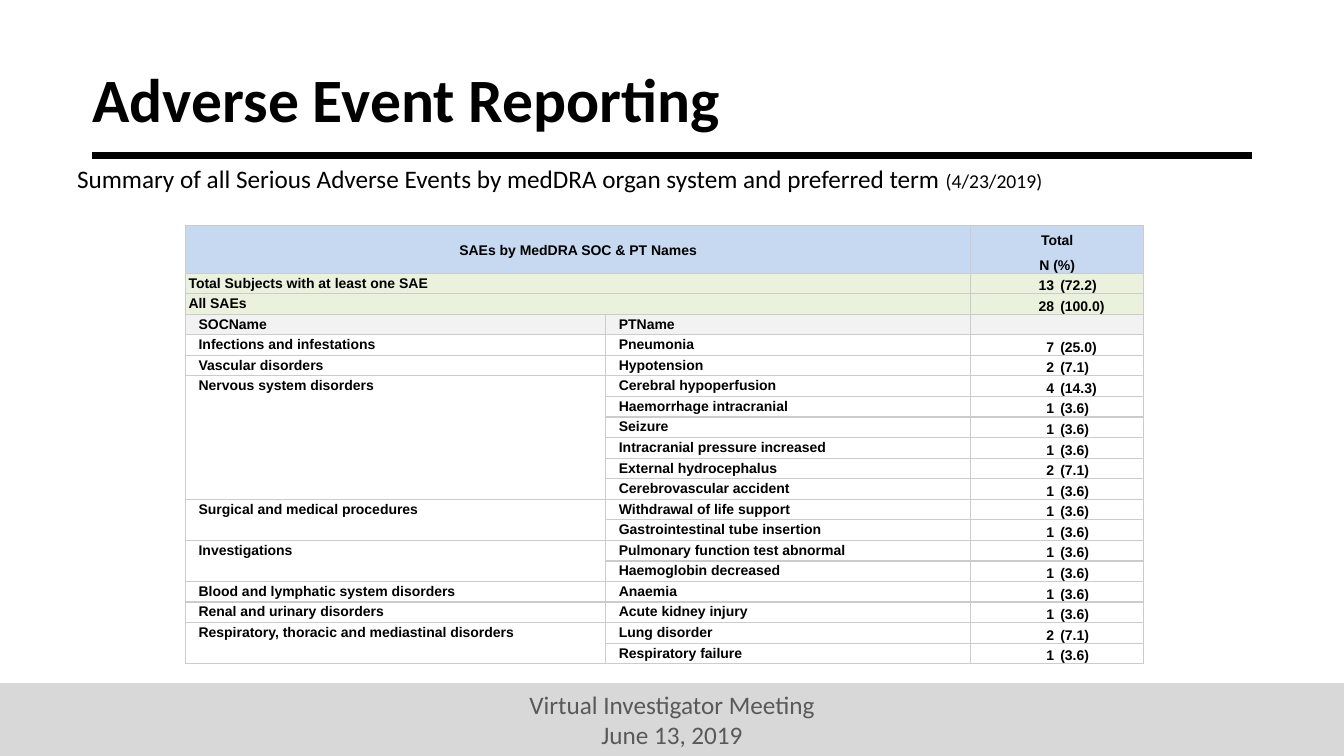
from dataclasses import dataclass
from typing import Any

from lxml.etree import SubElement
from pptx import Presentation
from pptx.dml.color import RGBColor
from pptx.enum.shapes import MSO_CONNECTOR, MSO_SHAPE
from pptx.enum.text import MSO_ANCHOR, PP_ALIGN
from pptx.oxml.ns import qn
from pptx.util import Pt

BLACK = RGBColor(0, 0, 0)
GREY = RGBColor(0x59, 0x59, 0x59)
BAND = RGBColor(0xD8, 0xD8, 0xD8)
RULE = RGBColor(0xCC, 0xCC, 0xCC)
BLUE = RGBColor(0xC6, 0xD9, 0xF1)
GREEN = RGBColor(0xEA, 0xF1, 0xDD)
PALE = RGBColor(0xF2, 0xF2, 0xF2)

TITLE = {"name": "Calibri", "size": Pt(44), "bold": True}
BODY = {"name": "Calibri", "size": Pt(18)}
SMALL = {"name": "Calibri", "size": Pt(14)}
CELL = {"name": "Arial", "size": Pt(10), "bold": True}
TIGHT = {"line_spacing": 0.9}
LOOSE = {"line_spacing": 1.15, "space_before": Pt(2.4), "space_after": Pt(2.4)}
COLS = [300.2, 260.6, 61.9, 61.9]
HEAD, ROW = 33.8, 14.7
INDENT = 7.2


@dataclass
class Event:
    term: str
    count: int
    share: str


@dataclass
class Organ:
    name: str
    events: list[Event]


TOTALS = [
    Event("Total Subjects with at least one SAE", 13, "72.2"),
    Event("All SAEs", 28, "100.0"),
]
ORGANS = [
    Organ("Infections and infestations", [Event("Pneumonia", 7, "25.0")]),
    Organ("Vascular disorders", [Event("Hypotension", 2, "7.1")]),
    Organ("Nervous system disorders", [
        Event("Cerebral hypoperfusion", 4, "14.3"),
        Event("Haemorrhage intracranial", 1, "3.6"),
        Event("Seizure", 1, "3.6"),
        Event("Intracranial pressure increased", 1, "3.6"),
        Event("External hydrocephalus", 2, "7.1"),
        Event("Cerebrovascular accident", 1, "3.6"),
    ]),
    Organ("Surgical and medical procedures", [
        Event("Withdrawal of life support", 1, "3.6"),
        Event("Gastrointestinal tube insertion", 1, "3.6"),
    ]),
    Organ("Investigations", [
        Event("Pulmonary function test abnormal", 1, "3.6"),
        Event("Haemoglobin decreased", 1, "3.6"),
    ]),
    Organ("Blood and lymphatic system disorders", [Event("Anaemia", 1, "3.6")]),
    Organ("Renal and urinary disorders", [Event("Acute kidney injury", 1, "3.6")]),
    Organ("Respiratory, thoracic and mediastinal disorders", [
        Event("Lung disorder", 2, "7.1"),
        Event("Respiratory failure", 1, "3.6"),
    ]),
]


def apply(item: Any, form: dict[str, Any]) -> None:
    for key, value in form.items():
        setattr(item, key, value)


def add_run(para: Any, text: str, form: dict[str, Any], color: RGBColor = BLACK) -> None:
    run = para.add_run()
    run.text = text
    apply(run.font, form)
    run.font.color.rgb = color


def add_box(slide: Any, left: float, top: float, width: float, height: float,
            anchor: MSO_ANCHOR) -> Any:
    frame = slide.shapes.add_textbox(Pt(left), Pt(top), Pt(width), Pt(height)).text_frame
    sides = ("margin_left", "margin_top", "margin_right", "margin_bottom")
    apply(frame, {"word_wrap": True, "vertical_anchor": anchor} | dict.fromkeys(sides, Pt(7.2)))
    return frame.paragraphs[0]


def set_cell(cell: Any, lines: list[str], align: PP_ALIGN = PP_ALIGN.LEFT,
             anchor: MSO_ANCHOR = MSO_ANCHOR.TOP, indent: float = 0) -> None:
    cell.vertical_anchor = anchor
    frame = cell.text_frame
    for i, line in enumerate(lines):
        para = frame.add_paragraph() if i else frame.paragraphs[0]
        apply(para, LOOSE | {"alignment": align})
        set_indent(para, indent)
        add_run(para, line, CELL)


def set_indent(para: Any, indent: float) -> None:
    props = para._p.get_or_add_pPr()
    props.set("marL", "0")
    props.set("indent", str(int(Pt(indent))))


def set_count(table: Any, row: int, event: Event) -> None:
    set_cell(table.cell(row, 2), [str(event.count)], PP_ALIGN.RIGHT, MSO_ANCHOR.BOTTOM)
    set_cell(table.cell(row, 3), [f"({event.share})"], anchor=MSO_ANCHOR.BOTTOM)


def style_cell(cell: Any, bare: str, fill: RGBColor | None) -> None:
    """Draw the cell's borders, except the bare side, and its fill."""
    apply(cell, {"margin_left": Pt(2.2), "margin_right": Pt(2.2),
                 "margin_top": 0, "margin_bottom": 0})
    props = cell._tc.get_or_add_tcPr()
    for side in "LRTB":
        line = SubElement(props, qn(f"a:ln{side}"), w=str(int(Pt(1))))
        if side == bare:
            SubElement(line, qn("a:noFill"))
        else:
            paint = SubElement(line, qn("a:solidFill"))
            SubElement(paint, qn("a:srgbClr"), val=str(RULE))
    if fill is None:
        cell.fill.background()
    else:
        cell.fill.solid()
        cell.fill.fore_color.rgb = fill
    # Keep empty cells as low as the others
    for para in cell.text_frame.paragraphs:
        if not para.runs:
            SubElement(para._p, qn("a:endParaRPr"), sz="1000")


def add_events(slide: Any) -> None:
    count = 2 + len(TOTALS) + sum(len(organ.events) for organ in ORGANS)
    table = slide.shapes.add_table(count, len(COLS), Pt(132.5), Pt(161.3), Pt(sum(COLS)),
                                   Pt(HEAD + ROW * (count - 1))).table
    apply(table, {"first_row": False, "horz_banding": False})
    for col, width in zip(table.columns, COLS):
        col.width = Pt(width)
    for i, row in enumerate(table.rows):
        row.height = Pt(ROW if i else HEAD)

    # Heading and totals
    set_cell(table.cell(0, 0), ["SAEs by MedDRA SOC & PT Names"], PP_ALIGN.CENTER,
             MSO_ANCHOR.MIDDLE)
    set_cell(table.cell(0, 2), ["Total", "N (%)"], PP_ALIGN.CENTER, MSO_ANCHOR.BOTTOM)
    set_indent(table.cell(0, 2).text_frame.paragraphs[0], -8.3)
    table.cell(0, 2).merge(table.cell(0, 3))
    for row, total in enumerate(TOTALS, 1):
        set_cell(table.cell(row, 0), [total.term])
        set_count(table, row, total)
    for row in range(len(TOTALS) + 1):
        table.cell(row, 0).merge(table.cell(row, 1))

    # Events by organ system
    row = len(TOTALS) + 1
    for col, name in enumerate(("SOCName", "PTName")):
        set_cell(table.cell(row, col), [name], indent=INDENT)
    row += 1
    for organ in ORGANS:
        set_cell(table.cell(row, 0), [organ.name], indent=INDENT)
        if len(organ.events) > 1:
            table.cell(row, 0).merge(table.cell(row + len(organ.events) - 1, 0))
        for event in organ.events:
            set_cell(table.cell(row, 1), [event.term], indent=INDENT)
            set_count(table, row, event)
            row += 1

    # Borders and fills
    fills = [BLUE, *[GREEN] * len(TOTALS), PALE]
    for i in range(count):
        for j in range(len(COLS)):
            bare = {2: "R", 3: "L"}.get(j, "") if i else ""
            style_cell(table.cell(i, j), bare, fills[i] if i < len(fills) else None)


def main() -> None:
    deck = Presentation()
    apply(deck, {"slide_width": Pt(960), "slide_height": Pt(540)})
    slide = deck.slides.add_slide(deck.slide_layouts[6])

    # Rule under the title
    rule = slide.shapes.add_connector(MSO_CONNECTOR.STRAIGHT, Pt(66), Pt(111), Pt(894), Pt(111))
    rule.line.color.rgb = BLACK
    rule.line.width = Pt(4.5)
    SubElement(rule._element.spPr, qn("a:effectLst"))

    # Footer band
    foot = slide.shapes.add_shape(MSO_SHAPE.RECTANGLE, 0, Pt(488), Pt(960), Pt(52))
    foot.shadow.inherit = False
    foot.fill.solid()
    foot.fill.fore_color.rgb = BAND
    foot.line.fill.background()
    frame = foot.text_frame
    apply(frame, {"word_wrap": True, "vertical_anchor": MSO_ANCHOR.MIDDLE})
    for i, text in enumerate(("Virtual Investigator Meeting", "June 13, 2019")):
        para = frame.add_paragraph() if i else frame.paragraphs[0]
        para.alignment = PP_ALIGN.CENTER
        add_run(para, text, BODY, GREY)

    # Title and summary
    para = add_box(slide, 59, 21, 747, 104.4, MSO_ANCHOR.MIDDLE)
    apply(para, TIGHT)
    add_run(para, "Adverse Event Reporting", TITLE)
    para = add_box(slide, 48, 111.6, 861, 371, MSO_ANCHOR.TOP)
    apply(para, TIGHT | {"space_before": Pt(10)})
    add_run(para, "Summary of all Serious Adverse Events by medDRA organ system "
                  "and preferred term ", BODY)
    add_run(para, "(4/23/2019)", SMALL)

    add_events(slide)
    deck.save("out.pptx")


if __name__ == "__main__":
    main()
